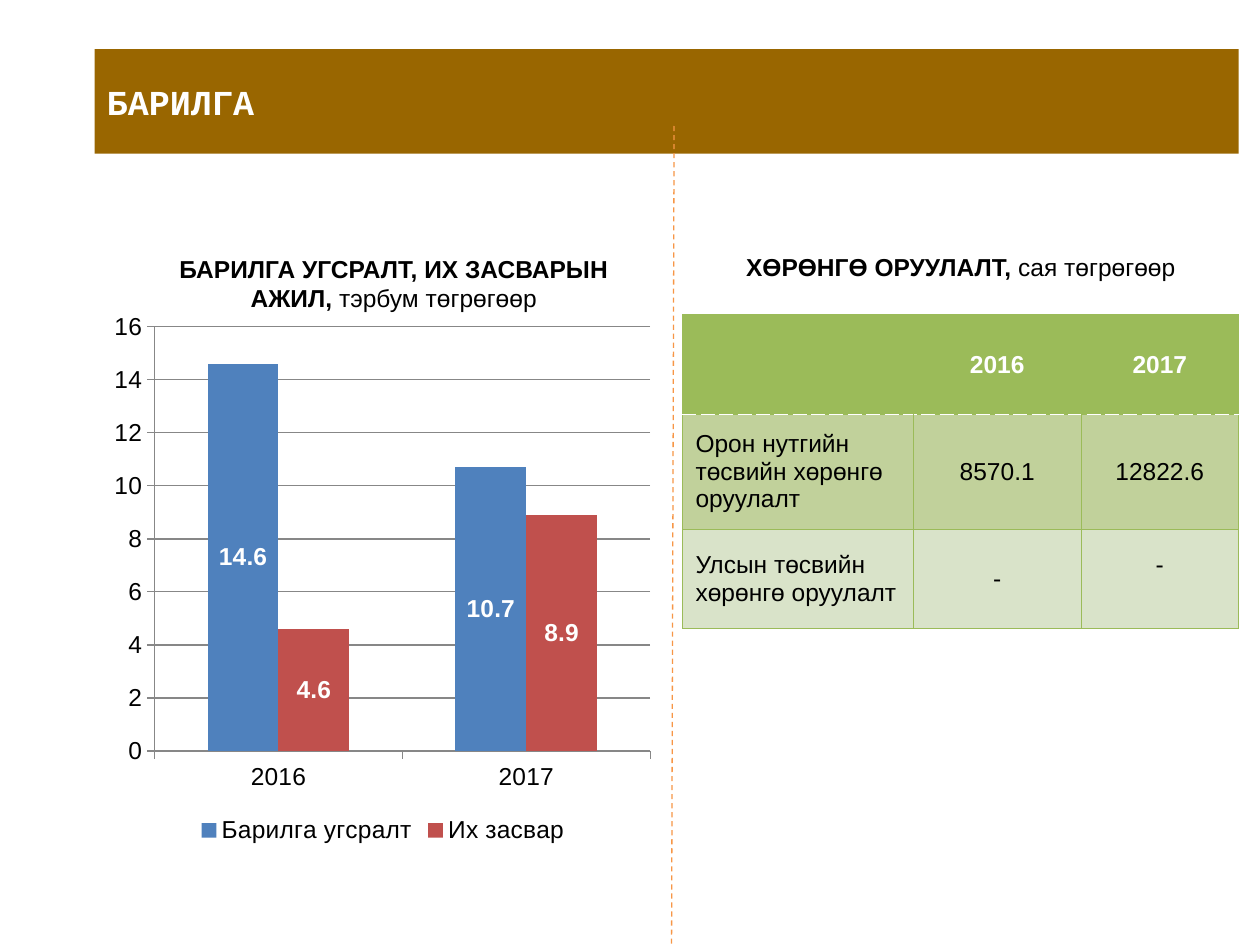
from lxml import etree
from pptx import Presentation
from pptx.chart import data as d
from pptx.dml import color as c
from pptx.enum import chart as ch, dml, shapes, text
from pptx.oxml import ns
from pptx.util import Inches, Pt

COLORS = {
    "brown": "996600", "white": "FFFFFF", "black": "000000",
    "blue": "4F81BD", "red": "C0504D", "orange": "F79646", "grid": "878787",
    "green": "9BBB59", "green_mid": "C1D19B", "green_light": "D9E3C9",
}


def rgb(name):
    return c.RGBColor.from_string(COLORS[name])


def add_run(paragraph, words, color="black", bold=False, size=14, font="Arial"):
    run = paragraph.add_run()
    run.text = words
    run.font.name = font
    run.font.size = Pt(size)
    run.font.bold = bold
    run.font.color.rgb = rgb(color)


def add_title(slide, box, words):
    shape = slide.shapes.add_shape(shapes.MSO_SHAPE.RECTANGLE, *box)
    shape.shadow.inherit = False
    shape.fill.solid()
    shape.fill.fore_color.rgb = rgb("brown")
    shape.line.fill.background()
    frame = shape.text_frame
    frame.vertical_anchor = text.MSO_ANCHOR.MIDDLE
    paragraph = frame.paragraphs[0]
    paragraph.alignment = text.PP_ALIGN.LEFT
    add_run(paragraph, words, "white", True, 20, "Courier New")


def add_heading(slide, box, subject, unit):
    frame = slide.shapes.add_textbox(*box).text_frame
    frame.word_wrap = True
    frame.vertical_anchor = text.MSO_ANCHOR.BOTTOM
    paragraph = frame.paragraphs[0]
    paragraph.alignment = text.PP_ALIGN.CENTER
    add_run(paragraph, subject, bold=True)
    add_run(paragraph, unit)


def set_plot_layout(chart, x, y, w, h):
    plot_area = chart.plots[0]._element.getparent()
    layout = plot_area.find(ns.qn("c:layout"))
    if layout is None:
        layout = etree.Element(ns.qn("c:layout"))
        plot_area.insert(0, layout)
    manual = etree.SubElement(layout, ns.qn("c:manualLayout"))
    settings = (("layoutTarget", "inner"), ("xMode", "edge"), ("yMode", "edge"),
                ("x", x), ("y", y), ("w", w), ("h", h))
    for tag, value in settings:
        etree.SubElement(manual, ns.qn(f"c:{tag}")).set("val", str(value))


def add_works_chart(slide, box):
    chart_data = d.CategoryChartData()
    chart_data.categories = ["2016", "2017"]
    chart_data.add_series("Барилга угсралт", (14.6, 10.7))
    chart_data.add_series("Их засвар", (4.6, 8.9))
    chart = slide.shapes.add_chart(
        ch.XL_CHART_TYPE.COLUMN_CLUSTERED, *box, chart_data).chart
    chart.has_title = False
    chart.font.name = "Arial"
    chart.font.size = Pt(14)
    chart.font.color.rgb = rgb("black")
    chart.has_legend = True
    chart.legend.position = ch.XL_LEGEND_POSITION.BOTTOM
    chart.legend.include_in_layout = False

    value_axis = chart.value_axis
    value_axis.minimum_scale = 0
    value_axis.maximum_scale = 16
    value_axis.major_unit = 2
    value_axis.has_major_gridlines = True
    axis_lines = (value_axis.format.line, value_axis.major_gridlines.format.line,
                  chart.category_axis.format.line)
    for line in axis_lines:
        line.color.rgb = rgb("grid")
        line.width = Pt(0.75)

    plot = chart.plots[0]
    plot.gap_width = 150
    plot.overlap = 0
    plot.vary_by_categories = False
    for series, color in zip(plot.series, ("blue", "red")):
        series.format.fill.solid()
        series.format.fill.fore_color.rgb = rgb(color)
        labels = series.data_labels
        labels.show_value = True
        labels.position = ch.XL_LABEL_POSITION.CENTER
        labels.font.name = "Arial"
        labels.font.size = Pt(14)
        labels.font.bold = True
        labels.font.color.rgb = rgb("white")
    set_plot_layout(chart, 0.09, 0.04, 0.89, 0.78)


def set_border(cell, side, color, width=0.75, dash="solid"):
    properties = cell._tc.get_or_add_tcPr()
    line = etree.SubElement(properties, ns.qn(f"a:ln{side}"), w=str(Pt(width)))
    if color is None:
        etree.SubElement(line, ns.qn("a:noFill"))
        return
    fill = etree.SubElement(line, ns.qn("a:solidFill"))
    etree.SubElement(fill, ns.qn("a:srgbClr"), val=COLORS[color])
    etree.SubElement(line, ns.qn("a:prstDash"), val=dash)


def add_investment_table(slide, box):
    rows = (
        ("", "2016", "2017"),
        ("Орон нутгийн төсвийн хөрөнгө оруулалт", "8570.1", "12822.6"),
        ("Улсын төсвийн хөрөнгө оруулалт", "-", "-"),
    )
    fills = ("green", "green_mid", "green_light")
    table = slide.shapes.add_table(3, 3, *box).table
    for column, width in zip(table.columns, (1.83, 1.33, 1.25)):
        column.width = Inches(width)
    for row, height in zip(table.rows, (0.79, 0.91, 0.79)):
        row.height = Inches(height)

    for i, row in enumerate(rows):
        for j, words in enumerate(row):
            cell = table.cell(i, j)
            set_border(cell, "L", None if i == 0 and j > 0 else "green")
            set_border(cell, "R", None if i == 0 and j < 2 else "green")
            for side, edge in (("T", i), ("B", i + 1)):
                if edge == 1:
                    set_border(cell, side, "white", 0.9, "sysDash")
                else:
                    set_border(cell, side, "green")
            cell.fill.solid()
            cell.fill.fore_color.rgb = rgb(fills[i])
            cell.vertical_anchor = text.MSO_ANCHOR.MIDDLE
            paragraph = cell.text_frame.paragraphs[0]
            paragraph.alignment = text.PP_ALIGN.CENTER if j else text.PP_ALIGN.LEFT
            if words:
                add_run(paragraph, words, "black" if i else "white", i == 0)
    table.cell(2, 2).margin_bottom = Inches(0.27)


def add_divider(slide, ends):
    connector = slide.shapes.add_connector(shapes.MSO_CONNECTOR.STRAIGHT, *ends)
    connector.line.color.rgb = rgb("orange")
    connector.line.width = Pt(0.75)
    connector.line.dash_style = dml.MSO_LINE.DASH
    etree.SubElement(connector._element.spPr, ns.qn("a:effectLst"))


def inches(*lengths):
    return [Inches(length) for length in lengths]


def main():
    presentation = Presentation()
    presentation.slide_width, presentation.slide_height = inches(10, 7.5)
    slide = presentation.slides.add_slide(presentation.slide_layouts[6])
    add_heading(slide, inches(5.5, 1.58, 4.25, 0.7),
                "ХӨРӨНГӨ ОРУУЛАЛТ, ", "сая төгрөгөөр")
    add_works_chart(slide, inches(0.83, 2.42, 4.42, 4.32))
    add_investment_table(slide, inches(5.42, 2.5, 4.42, 2.5))
    add_title(slide, inches(0.75, 0.39, 9.08, 0.83), "БАРИЛГА")
    add_heading(slide, inches(1, 1.83, 4.25, 0.7),
                "БАРИЛГА УГСРАЛТ, ИХ ЗАСВАРЫН АЖИЛ, ", "тэрбум төгрөгөөр")
    add_divider(slide, inches(5.35, 1, 5.33, 7.5))
    presentation.save("out.pptx")


if __name__ == "__main__":
    main()
